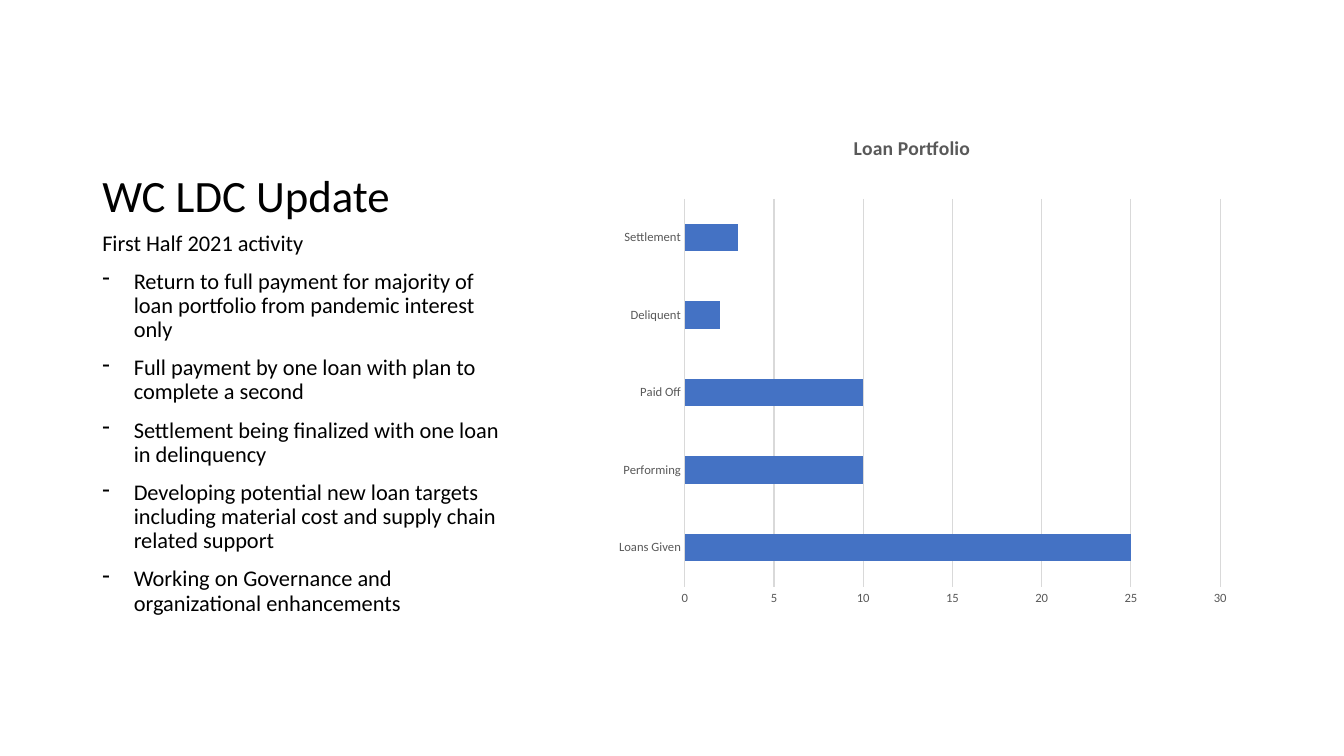
from lxml import etree
from pptx import Presentation
from pptx.chart.data import CategoryChartData
from pptx.dml.color import RGBColor
from pptx.enum.chart import XL_CHART_TYPE, XL_TICK_MARK
from pptx.enum.text import MSO_ANCHOR
from pptx.oxml.ns import qn
from pptx.util import Pt

BAR_CLUSTERED = XL_CHART_TYPE.BAR_CLUSTERED
NO_TICK = XL_TICK_MARK.NONE
TOP, BOTTOM = MSO_ANCHOR.TOP, MSO_ANCHOR.BOTTOM

FONT = "Calibri"
BLACK, GRAY, LIGHT_GRAY, BLUE = "000000", "595959", "D9D9D9", "4472C4"

HEADING = "WC LDC Update"
INTRO = "First Half 2021 activity"
ACTIVITIES = [
    "Return to full payment for majority of loan portfolio from pandemic interest only",
    "Full payment by one loan with plan to complete a second",
    "Settlement being finalized with one loan in delinquency",
    "Developing potential new loan targets including material cost and supply chain related support",
    "Working on Governance and organizational enhancements",
]
LOANS = {"Loans Given": 25, "Performing": 10, "Paid Off": 10, "Deliquent": 2, "Settlement": 3}


def color(hex_string):
    return RGBColor.from_string(hex_string)


def set_font(font, size, hex_string):
    font.name = FONT
    font.size = Pt(size)
    font.color.rgb = color(hex_string)


def add_text(slide, box, lines, size, anchor, space_before=0):
    """Add one paragraph per line and return the paragraphs."""
    frame = slide.shapes.add_textbox(*map(Pt, box)).text_frame
    frame.word_wrap = True
    frame.vertical_anchor = anchor
    frame.text = "\n".join(lines)
    for paragraph in frame.paragraphs:
        paragraph.line_spacing = 0.9
        paragraph.space_before = Pt(space_before)
        set_font(paragraph.font, size, BLACK)
    return frame.paragraphs


def add_dash(paragraph, indent=22.5):
    properties = paragraph._p.get_or_add_pPr()
    properties.set("marL", str(Pt(indent)))
    properties.set("indent", str(-Pt(indent)))
    bullet = etree.Element(qn("a:buChar"), char="-")
    following = properties.find(qn("a:defRPr"))
    if following is None:
        properties.append(bullet)
    else:
        following.addprevious(bullet)


def add_summary(slide, left, top, width, height):
    heading_height = 126
    add_text(slide, (left, top, width, heading_height), [HEADING], 32, BOTTOM)
    body = (left, top + heading_height, width, height - heading_height)
    paragraphs = add_text(slide, body, [INTRO] + ACTIVITIES, 16, TOP, 10)
    for paragraph in paragraphs[1:]:
        add_dash(paragraph)


def set_layout(element, index, **settings):
    """Fix the place of a chart part, as fractions of the chart."""
    existing = element.find(qn("c:layout"))
    if existing is not None:
        element.remove(existing)
    layout = etree.Element(qn("c:layout"))
    manual = etree.SubElement(layout, qn("c:manualLayout"))
    for name, value in settings.items():
        etree.SubElement(manual, qn(f"c:{name}"), val=str(value))
    element.insert(index, layout)


def add_loan_chart(slide, left, top, width, height):
    data = CategoryChartData()
    data.categories = list(LOANS)
    data.add_series("Series 1", list(LOANS.values()))
    frame = slide.shapes.add_chart(BAR_CLUSTERED, Pt(left), Pt(top), Pt(width), Pt(height), data)
    chart = frame.chart
    set_font(chart.font, 10, BLACK)
    chart.has_legend = False

    title = chart.chart_title
    title.text_frame.text = "Loan Portfolio"
    set_font(title.text_frame.paragraphs[0].font, 14, GRAY)
    set_layout(title._element, 1, xMode="edge", yMode="edge", x=0.41, y=0.04)
    set_layout(chart._chartSpace.chart.plotArea, 0, layoutTarget="inner",
               xMode="edge", yMode="edge", x=0.167, y=0.167, w=0.787, h=0.721)

    plot = chart.plots[0]
    plot.gap_width = 182
    plot.vary_by_categories = False
    fill = plot.series[0].format.fill
    fill.solid()
    fill.fore_color.rgb = color(BLUE)

    values = chart.value_axis
    values.minimum_scale, values.maximum_scale, values.major_unit = 0, 30, 5
    values.has_major_gridlines = True
    values.format.line.fill.background()
    for axis in (chart.category_axis, values):
        axis.major_tick_mark = axis.minor_tick_mark = NO_TICK
        set_font(axis.tick_labels.font, 9, GRAY)
    for line in (chart.category_axis.format.line, values.major_gridlines.format.line):
        line.color.rgb = color(LIGHT_GRAY)
        line.width = Pt(0.75)


def main():
    presentation = Presentation()
    presentation.slide_width, presentation.slide_height = Pt(960), Pt(540)
    slide = presentation.slides.add_slide(presentation.slide_layouts[6])
    add_summary(slide, 66, 36, 309.6, 426)
    add_loan_chart(slide, 408, 78, 486, 384)
    presentation.save("out.pptx")


if __name__ == "__main__":
    main()
